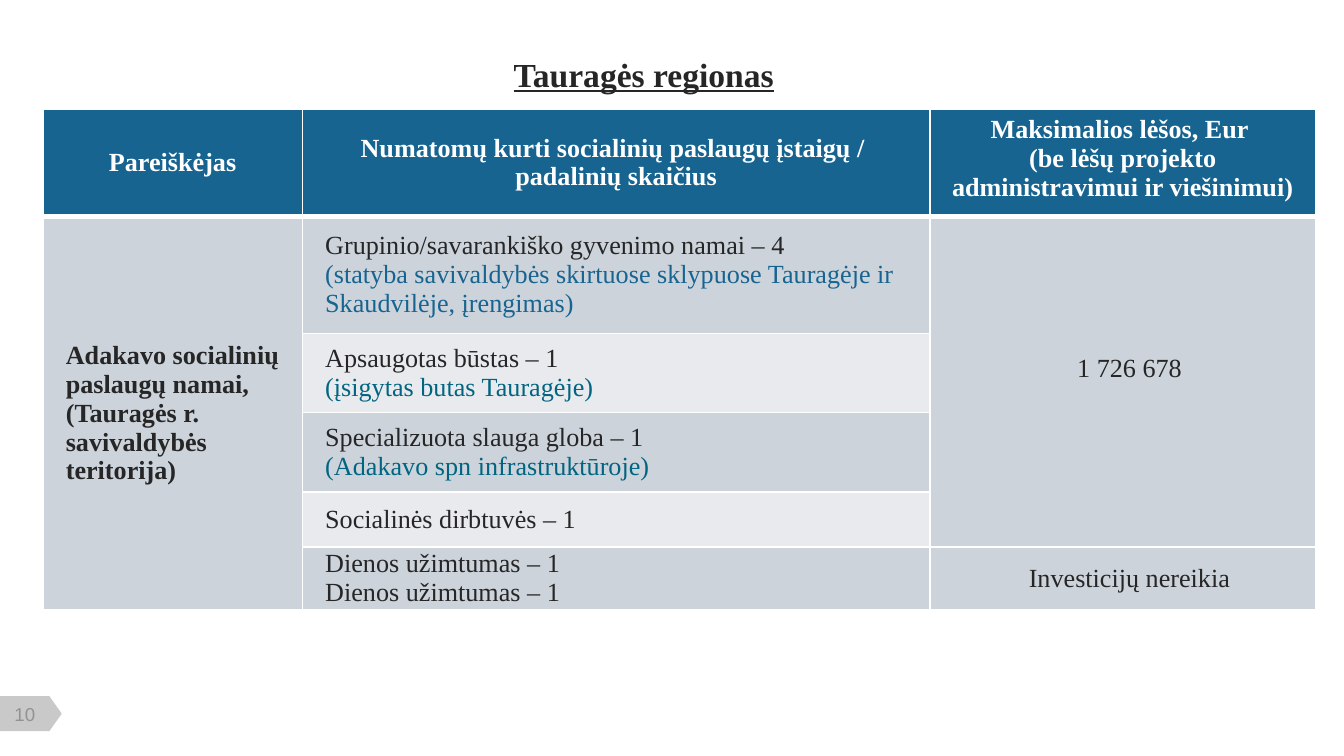
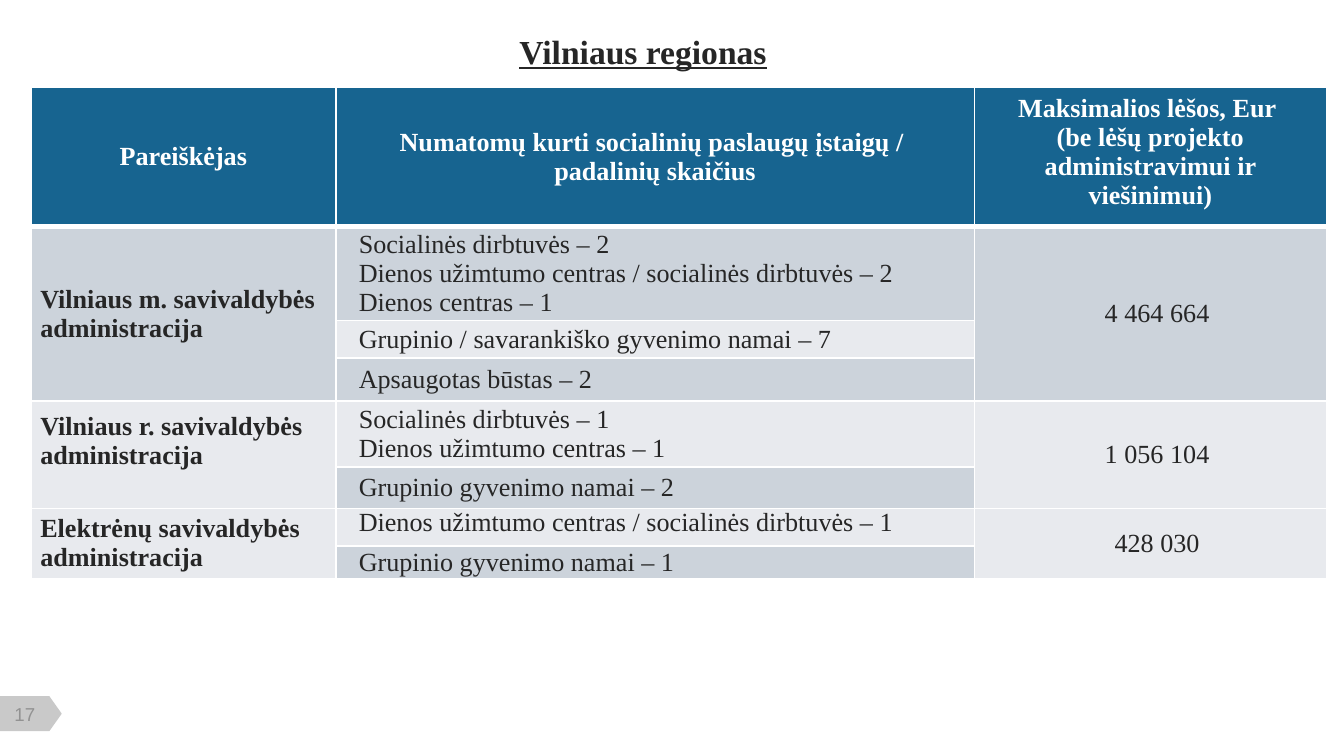
from lxml import etree
from pptx import Presentation
from pptx import util as u
from pptx.dml.color import RGBColor
from pptx.enum import shapes, text
from pptx.oxml import ns

WHITE = RGBColor(0xFF, 0xFF, 0xFF)
INK = RGBColor(0x26, 0x26, 0x26)
BLUE = RGBColor(0x17, 0x64, 0x90)
TEAL = RGBColor(0x01, 0x65, 0x81)
TAG = RGBColor(0xC9, 0xC9, 0xC9)
TAG_INK = RGBColor(0x92, 0x92, 0x92)
BANDS = (RGBColor(0xE8, 0xEA, 0xEE), RGBColor(0xCC, 0xD3, 0xDB))
SERIF, SANS = "Times New Roman", "Arial"
CENTER, LEFT = text.PP_ALIGN.CENTER, text.PP_ALIGN.LEFT
MIDDLE, TOP = text.MSO_ANCHOR.MIDDLE, text.MSO_ANCHOR.TOP
HEADERS = (
    "Pareiškėjas",
    "Numatomų kurti socialinių paslaugų įstaigų / \npadalinių skaičius",
    "Maksimalios lėšos, Eur \n(be lėšų projekto administravimui ir viešinimui)",
)


class Deck:
    """Build region slides that share a title, a funding table and a page tag."""

    def __init__(self):
        self.prs = Presentation()
        self.prs.slide_width = u.Inches(10)
        self.prs.slide_height = u.Inches(10 * 9 / 16)
        self.s = self.tbl = None

    def slide(self, title, left, top, width, number):
        self.s = self.prs.slides.add_slide(self.prs.slide_layouts[6])
        self.page_tag(number)
        self.label(title, left, top, width, 0.3, SERIF, 18, INK, True, True)

    def style(self, tf, font, size, color, bold=False, underline=False, align=CENTER):
        for p in tf.paragraphs:
            p.alignment = align
            for r in p.runs:
                r.font.name, r.font.size = font, u.Pt(size)
                r.font.bold, r.font.underline = bold, underline
                r.font.color.rgb = color

    def label(self, words, left, top, width, height, *look):
        sp = self.s.shapes.add_textbox(*map(u.Inches, (left, top, width, height)))
        tf = sp.text_frame
        tf.margin_left = tf.margin_right = tf.margin_top = tf.margin_bottom = 0
        tf.word_wrap, tf.vertical_anchor = True, MIDDLE
        tf.text = words
        self.style(tf, *look)

    def page_tag(self, number):
        sp = self.s.shapes.add_shape(
            shapes.MSO_SHAPE.FLOWCHART_OFFPAGE_CONNECTOR,
            *map(u.Inches, (0.1, 5.08, 0.26, 0.46)))
        sp.rotation = 270
        sp.shadow.inherit = False
        sp.fill.solid()
        sp.fill.fore_color.rgb = TAG
        sp.line.fill.background()
        self.label(str(number), 0.02, 5.23, 0.33, 0.17, SANS, 10, TAG_INK)

    def table(self, left, top, widths, heights):
        frame = self.s.shapes.add_table(
            len(heights), len(widths),
            *map(u.Inches, (left, top, sum(widths), sum(heights))))
        self.tbl = frame.table
        for col, width in zip(self.tbl.columns, widths):
            col.width = u.Inches(width)
        for i, (row, height) in enumerate(zip(self.tbl.rows, heights)):
            row.height = u.Inches(height)
            for cell in row.cells:
                cell.fill.solid()
                cell.fill.fore_color.rgb = BANDS[i % 2] if i else BLUE
                self.borders(cell, i)
        for i, words in enumerate(HEADERS):
            self.cell(0, i, words, color=WHITE, bold=True, align=CENTER, left=0.07)
        cell = self.tbl.cell(0, 2)
        cell.vertical_anchor = TOP
        cell.margin_left = cell.margin_right = u.Inches(0.1)
        cell.margin_top = cell.margin_bottom = u.Inches(0.05)

    def borders(self, cell, row):
        tc_pr = cell._tc.get_or_add_tcPr()
        weights = {"L": 1, "R": 1, "T": 3 if row == 1 else 1, "B": 1 if row else 3}
        for i, (side, weight) in enumerate(weights.items()):
            ln = etree.Element(ns.qn(f"a:ln{side}"), w=str(u.Pt(weight)))
            fill = etree.SubElement(ln, ns.qn("a:solidFill"))
            etree.SubElement(fill, ns.qn("a:srgbClr"), val=str(WHITE))
            tc_pr.insert(i, ln)

    def cell(self, row, col, words, span=1, color=INK, bold=False, align=LEFT,
             left=0.17, bottom=0, accent=None):
        cell = self.tbl.cell(row, col)
        if span > 1:
            cell.merge(self.tbl.cell(row + span - 1, col))
        cell.margin_left, cell.margin_right = u.Inches(left), u.Inches(0.07)
        cell.margin_top, cell.margin_bottom = 0, u.Inches(bottom)
        cell.vertical_anchor = MIDDLE
        tf = cell.text_frame
        tf.text = words
        self.style(tf, SERIF, 14, color, bold, align=align)
        if accent:
            for r in tf.paragraphs[1].runs:
                r.font.color.rgb = accent

    def applicant(self, row, span, words, **look):
        self.cell(row, 0, words, span, bold=True, **look)

    def services(self, *entries):
        for row, (words, accent) in enumerate(entries, 1):
            self.cell(row, 1, words, accent=accent)

    def funds(self, row, span, words, **look):
        self.cell(row, 2, words, span, align=CENTER, **look)


def taurage(deck):
    deck.slide("Tauragės regionas", 3.58, 0.4, 2.42, 10)
    deck.table(0.32, 0.81, (1.93, 4.67, 2.87), (0.79, 0.87, 0.59, 0.59, 0.41, 0.47))
    deck.applicant(1, 5, "Adakavo socialinių paslaugų namai, "
                         "(Tauragės r. savivaldybės teritorija)")
    deck.services(
        ("Grupinio/savarankiško gyvenimo namai – 4\n(statyba savivaldybės "
         "skirtuose sklypuose Tauragėje ir Skaudvilėje, įrengimas)", BLUE),
        ("Apsaugotas būstas – 1\n(įsigytas butas Tauragėje)", TEAL),
        ("Specializuota slauga globa – 1\n(Adakavo spn infrastruktūroje)", TEAL),
        ("Socialinės dirbtuvės – 1", None),
        ("Dienos užimtumas – 1\nDienos užimtumas – 1", None),
    )
    deck.funds(1, 4, "1 726 678", bottom=0.2)
    deck.funds(5, 1, "Investicijų nereikia")


def vilnius(deck):
    deck.slide("Vilniaus regionas", 3.33, 0.23, 2.91, 17)
    deck.table(0.23, 0.65, (2.27, 4.75, 2.62),
               (1.01, 0.7, 0.28, 0.32, 0.49, 0.31, 0.28, 0.24))
    deck.services(*((words, None) for words in (
        "Socialinės dirbtuvės – 2\nDienos užimtumo centras / socialinės dirbtuvės – 2\n"
        "Dienos centras – 1",
        "Grupinio / savarankiško gyvenimo namai – 7",
        "Apsaugotas būstas – 2",
        "Socialinės dirbtuvės – 1\nDienos užimtumo centras – 1",
        "Grupinio gyvenimo namai – 2",
        "Dienos užimtumo centras / socialinės dirbtuvės – 1",
        "Grupinio gyvenimo namai – 1",
    )))
    deck.tbl.cell(6, 1).vertical_anchor = TOP
    for row, span, place, amount, bottom in (
        (1, 3, "Vilniaus m.", "4 464 664", 0),
        (4, 2, "Vilniaus r.", "1 056 104", 0.2),
        (6, 2, "Elektrėnų", "428 030", 0),
    ):
        deck.applicant(row, span, f"{place} savivaldybės\nadministracija",
                       left=0.07, bottom=bottom)
        deck.funds(row, span, amount)


def main():
    deck = Deck()
    taurage(deck)
    vilnius(deck)
    deck.prs.save("out.pptx")


if __name__ == "__main__":
    main()
